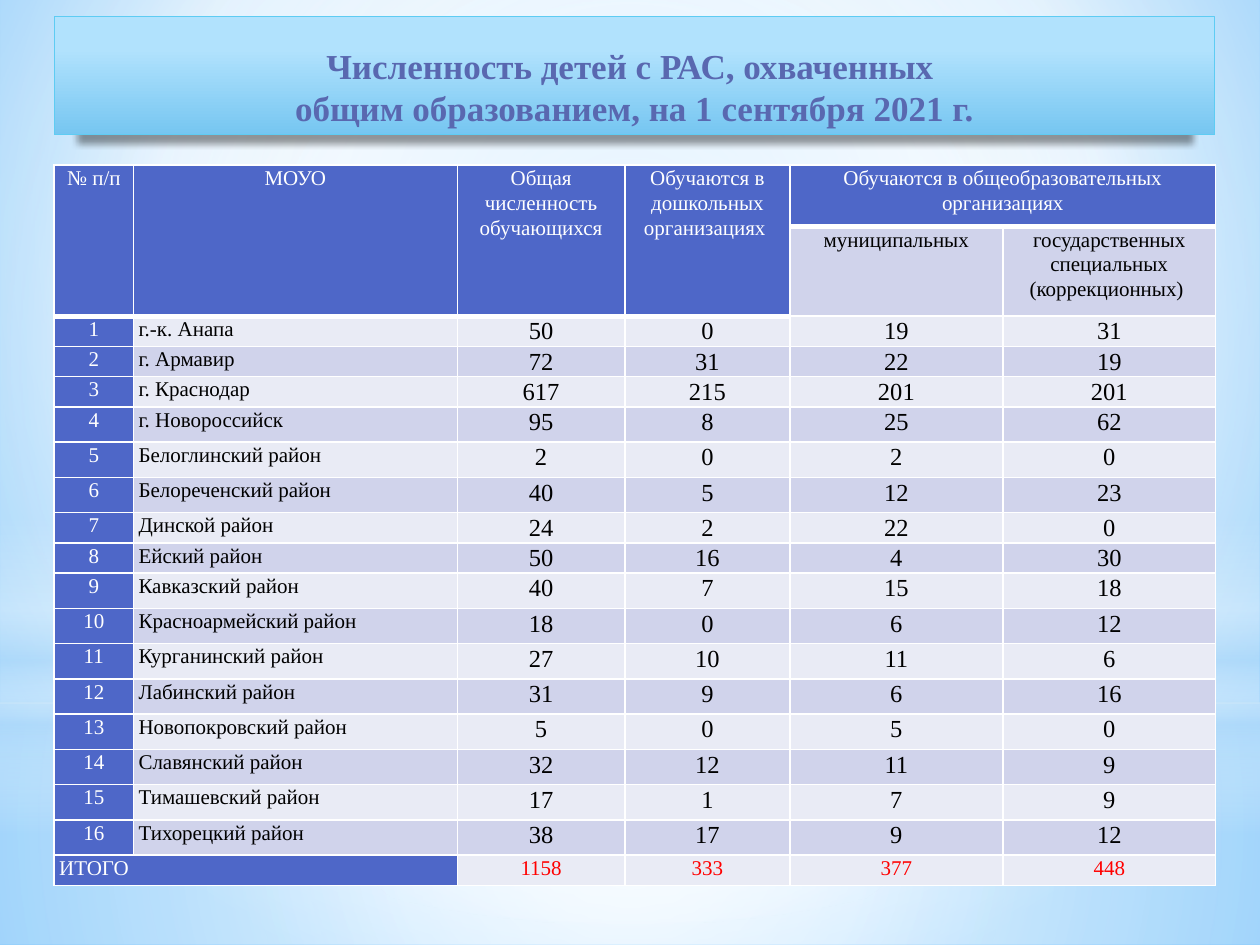
from lxml.etree import SubElement
from pptx import Presentation
from pptx.dml.color import RGBColor
from pptx.enum.shapes import MSO_SHAPE
from pptx.enum.text import MSO_ANCHOR, PP_ALIGN
from pptx.oxml.ns import qn
from pptx.oxml.xmlchemy import OxmlElement
from pptx.util import Inches, Pt

FONT = "Times New Roman"
HEX = {
    "white": "FFFFFF", "black": "000000", "red": "FF0000",
    "head": "4E67C8", "dark": "D0D3EB", "light": "E9EBF5",
    "title": "5968B0", "edge": "5ECCF3", "top": "B1E2FD", "base": "76C6F1",
    "haze": "B4DCFA", "sky": "9ED5FF", "deep": "5BB9FF",
}
COLS = [0.63, 2.57, 1.33, 1.31, 1.69, 1.69]
LOW_ROWS = {2, 3, 4, 8, 9, 18}
HEADS = ["№ п/п", "МОУО", "Общая численность обучающихся",
         "Обучаются в дошкольных организациях ",
         "Обучаются в общеобразовательных организациях"]
SUBHEADS = ["муниципальных", "государственных специальных (коррекционных) "]
AREAS = [
    ("г.-к. Анапа", 50, 0, 19, 31),
    ("г. Армавир", 72, 31, 22, 19),
    ("г. Краснодар", 617, 215, 201, 201),
    ("г. Новороссийск", 95, 8, 25, 62),
    ("Белоглинский район", 2, 0, 2, 0),
    ("Белореченский район", 40, 5, 12, 23),
    ("Динской район", 24, 2, 22, 0),
    ("Ейский район", 50, 16, 4, 30),
    ("Кавказский район", 40, 7, 15, 18),
    ("Красноармейский район", 18, 0, 6, 12),
    ("Курганинский район", 27, 10, 11, 6),
    ("Лабинский район", 31, 9, 6, 16),
    ("Новопокровский район", 5, 0, 5, 0),
    ("Славянский район", 32, 12, 11, 9),
    ("Тимашевский район", 17, 1, 7, 9),
    ("Тихорецкий район", 38, 17, 9, 12),
]
TOTALS = [1158, 333, 377, 448]


def color(name):
    return RGBColor.from_string(HEX[name])


def blend(fill, props, stops, focus=None):
    """Fill with (position, colour, opacity) stops, round a focus or downwards."""
    fill.solid()
    grad = OxmlElement("a:gradFill")
    grad.set("rotWithShape", "1")
    items = SubElement(grad, qn("a:gsLst"))
    for pos, name, alpha in stops:
        stop = SubElement(items, qn("a:gs"), pos=str(pos * 1000))
        tone = SubElement(stop, qn("a:srgbClr"), val=HEX[name])
        if alpha < 100:
            SubElement(tone, qn("a:alpha"), val=str(alpha * 1000))
    if focus:
        way = SubElement(grad, qn("a:path"))
        way.set("path", "circle")
        sides = {k: str(v * 1000) for k, v in zip("ltrb", focus)}
        SubElement(way, qn("a:fillToRect"), **sides)
    else:
        SubElement(grad, qn("a:lin"), ang="5400000", scaled="0")
    props.replace(props.find(qn("a:solidFill")), grad)


def add_panel(slide, kind, box, stops, focus=None):
    shape = slide.shapes.add_shape(kind, *map(Inches, box))
    shape.shadow.inherit = False
    blend(shape.fill, shape.element.spPr, stops, focus)
    shape.line.fill.background()
    return shape


def add_backdrop(slide):
    fill = slide.background.fill
    fill.solid()
    props = slide.element.find(".//" + qn("p:bgPr"))
    blend(fill, props, [(0, "sky", 100), (60, "white", 100), (100, "deep", 100)],
          (20, 10, 20, 60))
    mid = (50, 50, 50, 50)
    rect = MSO_SHAPE.RECTANGLE
    add_panel(slide, rect, (0, 5.58, 10, 1.92),
              [(0, "white", 91), (37, "white", 76), (100, "haze", 79)], mid)
    add_panel(slide, rect, (0, 0, 10, 5.58),
              [(0, "white", 89), (48, "white", 62), (100, "haze", 79)], mid)
    add_panel(slide, rect, (0, 4.12, 10, 2.5),
              [(0, "white", 0), (29, "white", 30), (45, "haze", 40),
               (55, "white", 26), (65, "haze", 60), (100, "white", 0)])
    add_panel(slide, MSO_SHAPE.OVAL, (0, 1.75, 10, 5.58),
              [(0, "white", 100), (56, "white", 0)], mid)


def add_run(para, text, size, name, bold=False):
    run = para.add_run()
    run.text = text
    font = run.font
    font.name, font.size, font.bold = FONT, Pt(size), bold
    font.color.rgb = color(name)


def add_title(slide, lines):
    shape = add_panel(slide, MSO_SHAPE.RECTANGLE, (0.43, 0.13, 9.21, 0.94),
                      [(28, "top", 100), (100, "base", 100)])
    shape.line.color.rgb = color("edge")
    shape.line.width = Pt(0.75)
    effects = shape.element.spPr.find(qn("a:effectLst"))
    shade = SubElement(effects, qn("a:outerShdw"), blurRad="50800", dist="50800",
                       dir="5400000", sx="96000", sy="100000", algn="t",
                       rotWithShape="0")
    tone = SubElement(shade, qn("a:srgbClr"), val=HEX["black"])
    SubElement(tone, qn("a:alpha"), val="40000")
    frame = shape.text_frame
    frame.word_wrap = True
    frame.vertical_anchor = MSO_ANCHOR.BOTTOM
    para = frame.paragraphs[0]
    para.alignment = PP_ALIGN.CENTER
    for i, line in enumerate(lines):
        if i:
            para.add_line_break()
        add_run(para, line, 20, "title", True)


def set_edges(cell, row, col):
    """Draw white borders, thicker under the header cells."""
    split = 2 if col < 4 else 1
    heavy = {"T": row == split, "B": row == split - 1}
    props = cell._tc.get_or_add_tcPr()
    for side in "LRTB":
        width = Pt(3 if heavy.get(side) else 1)
        line = SubElement(props, qn("a:ln" + side), w=str(width))
        solid = SubElement(line, qn("a:solidFill"))
        SubElement(solid, qn("a:srgbClr"), val=HEX["white"])


def set_text(cell, text, size=12, name="black", align=PP_ALIGN.CENTER):
    para = cell.text_frame.paragraphs[0]
    para.alignment = align
    para.line_spacing = 1.07
    add_run(para, str(text), size, name)


def cell_fill(row, col):
    if row == 0 or col == 0 or (row == 1 and col < 4):
        return "head"
    return "dark" if row % 2 else "light"


def add_grid(slide):
    last = len(AREAS) + 2
    heights = [0.49, 0.71] + [0.24 if r in LOW_ROWS else 0.28
                              for r in range(2, last + 1)]
    table = slide.shapes.add_table(last + 1, len(COLS), Inches(0.43), Inches(1.31),
                                   Inches(9.21), Inches(sum(heights))).table
    table.first_row = table.horz_banding = False
    for col, width in zip(table.columns, COLS):
        col.width = Inches(width)
    for r, height in enumerate(heights):
        table.rows[r].height = Inches(height)
        for c in range(len(COLS)):
            cell = table.cell(r, c)
            set_edges(cell, r, c)
            cell.fill.solid()
            cell.fill.fore_color.rgb = color(cell_fill(r, c))
            cell.margin_left = cell.margin_right = Inches(0.04)
            cell.margin_top = cell.margin_bottom = 0
    for c in range(4):
        table.cell(0, c).merge(table.cell(1, c))
    table.cell(0, 4).merge(table.cell(0, 5))
    table.cell(last, 0).merge(table.cell(last, 1))

    for c, text in enumerate(HEADS):
        set_text(table.cell(0, c), text, name="white")
    for c, text in enumerate(SUBHEADS, 4):
        set_text(table.cell(1, c), text)
    for num, (area, *counts) in enumerate(AREAS, 1):
        set_text(table.cell(num + 1, 0), num, name="white")
        set_text(table.cell(num + 1, 1), area, align=PP_ALIGN.LEFT)
        for c, count in enumerate(counts, 2):
            set_text(table.cell(num + 1, c), count, 14)
    set_text(table.cell(last, 0), "ИТОГО", name="white", align=PP_ALIGN.LEFT)
    for c, total in enumerate(TOTALS, 2):
        set_text(table.cell(last, c), total, name="red")


def main():
    deck = Presentation()
    deck.slide_width, deck.slide_height = Inches(10), Inches(7.5)
    slide = deck.slides.add_slide(deck.slide_layouts[6])
    add_backdrop(slide)
    add_title(slide, ["Численность детей с РАС, охваченных ",
                      "общим образованием, на 1 сентября 2021 г."])
    add_grid(slide)
    deck.save("out.pptx")


if __name__ == "__main__":
    main()
